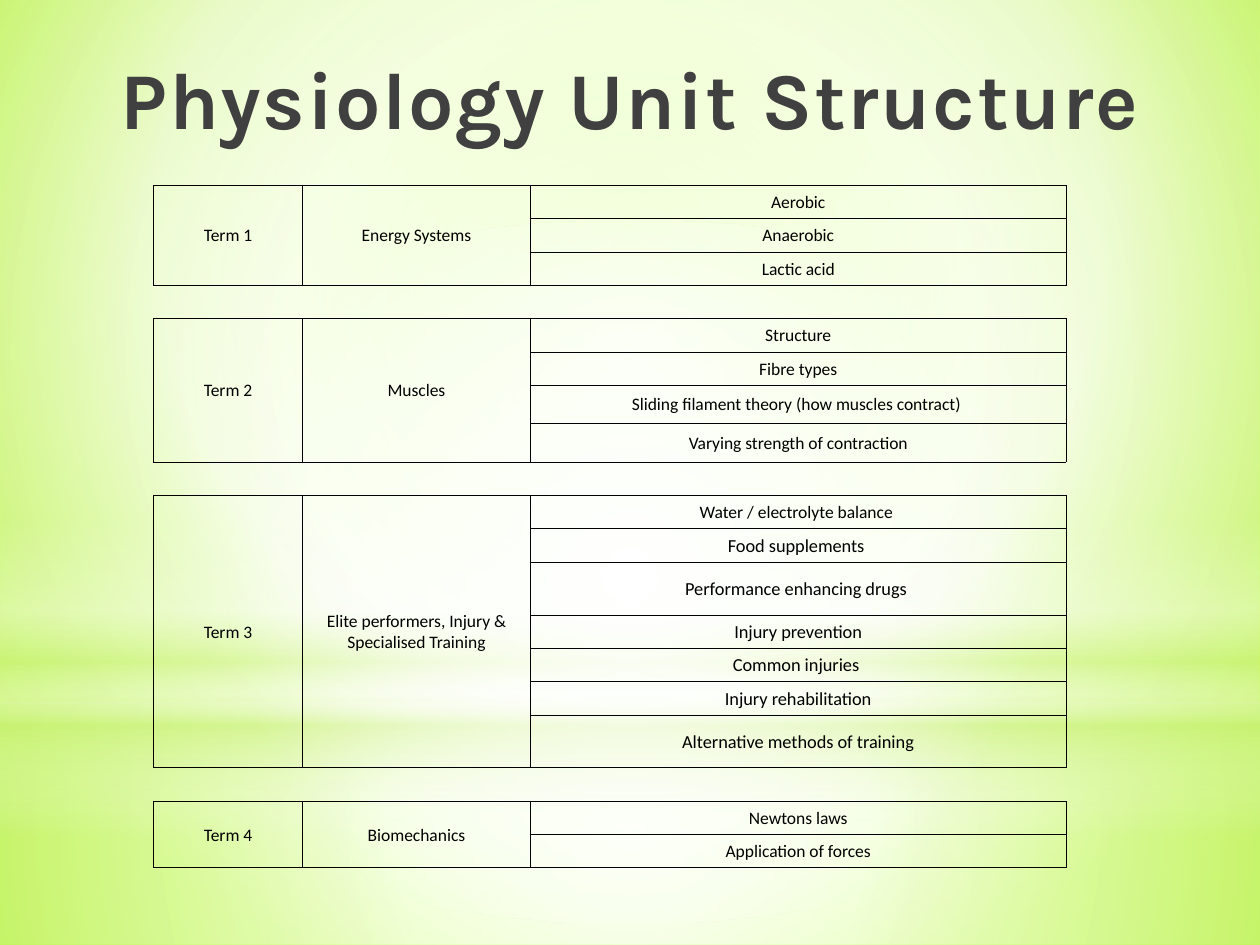
from lxml.etree import SubElement
from pptx import Presentation
from pptx.dml.color import RGBColor
from pptx.enum.shapes import MSO_SHAPE
from pptx.enum.text import MSO_ANCHOR, PP_ALIGN
from pptx.oxml import parse_xml
from pptx.oxml.ns import nsdecls, qn
from pptx.util import Inches, Pt

THEME = {
    "title": RGBColor(0x40, 0x40, 0x40),
    "text": RGBColor(0, 0, 0),
    "border": "000000",
    "white": "FFFFFF",
    "lime": "CAF278",
    "backdrop": [(0, "CAFF60", 100), (60, "F7FFE7", 100), (100, "B7FF29", 100)],
    "title_font": "Karla",
    "body_font": "Calibri",
    "title_size": Pt(46),
    "body_size": Pt(10),
    "large_size": Pt(10.5),
    "border_width": Pt(0.5),
}
WHITE, LIME = THEME["white"], THEME["lime"]
CENTRE = (50, 50, 50, 50)


def paint_gradient(fill, parent, stops, focus=None):
    fill.solid()
    stop_xml = "".join(
        f'<a:gs pos="{position * 1000}"><a:srgbClr val="{color}">'
        f'<a:alpha val="{alpha * 1000}"/></a:srgbClr></a:gs>'
        for position, color, alpha in stops
    )
    direction = '<a:lin ang="5400000" scaled="0"/>'
    if focus:
        edges = " ".join(f'{side}="{share * 1000}"' for side, share in zip("ltrb", focus))
        direction = f'<a:path path="circle"><a:fillToRect {edges}/></a:path>'
    gradient = parse_xml(
        f'<a:gradFill {nsdecls("a")} rotWithShape="1"><a:gsLst>{stop_xml}</a:gsLst>'
        f"{direction}</a:gradFill>"
    )
    parent.replace(parent.find(qn("a:solidFill")), gradient)


def set_borders(cell, visible_sides):
    properties = cell._tc.get_or_add_tcPr()
    for index, side in enumerate("LRTB"):
        paint = "<a:noFill/>"
        if side in visible_sides:
            paint = f'<a:solidFill><a:srgbClr val="{THEME["border"]}"/></a:solidFill>'
        properties.insert(index, parse_xml(
            f'<a:ln{side} {nsdecls("a")} w="{THEME["border_width"]}">{paint}</a:ln{side}>'
        ))


presentation = Presentation()
presentation.slide_width = Inches(10)
presentation.slide_height = Inches(7.5)
width, height = presentation.slide_width, presentation.slide_height
slide = presentation.slides.add_slide(presentation.slide_layouts[5])

background = slide.background.fill
background.solid()
paint_gradient(background, slide.element.find(".//" + qn("p:bgPr")),
               THEME["backdrop"], (20, 10, 20, 60))

horizon = 0.744
glows = [
    (MSO_SHAPE.RECTANGLE, horizon, 1 - horizon, CENTRE,
     [(0, WHITE, 91), (37, WHITE, 76), (100, LIME, 79)]),
    (MSO_SHAPE.RECTANGLE, 0, horizon, CENTRE,
     [(0, WHITE, 89), (48, WHITE, 62), (100, LIME, 79)]),
    (MSO_SHAPE.RECTANGLE, 0.55, 0.333, None,
     [(0, WHITE, 0), (29, WHITE, 30), (45, LIME, 40),
      (55, WHITE, 26), (65, LIME, 60), (100, WHITE, 0)]),
    (MSO_SHAPE.OVAL, 0.233, horizon, CENTRE, [(0, WHITE, 100), (56, WHITE, 0)]),
]
for kind, top, share, focus, stops in glows:
    shape = slide.shapes.add_shape(kind, 0, int(height * top), width, int(height * share))
    shape.shadow.inherit = False
    shape.line.fill.background()
    paint_gradient(shape.fill, shape.element.spPr, stops, focus)

title = slide.shapes.title
title.element.getparent().append(title.element)
title.left, title.top = int(width * 0.028), int(height * 0.039)
title.width, title.height = int(width * 0.945), int(height * 0.147)
title.text_frame.vertical_anchor = MSO_ANCHOR.MIDDLE
title.text_frame.margin_bottom = Inches(0.19)
paragraph = title.text_frame.paragraphs[0]
paragraph.alignment = PP_ALIGN.CENTER
run = paragraph.add_run()
run.text = "Physiology Unit Structure"
run.font.name = THEME["title_font"]
run.font.size = THEME["title_size"]
run.font.bold = True
run.font.color.rgb = THEME["title"]
run.font._element.set("spc", "100")

terms = [
    ("Term 1", "Energy Systems", ["Aerobic", "Anaerobic", "Lactic acid"]),
    ("Term 2", "Muscles", [
        "Structure", "Fibre types", "Sliding filament theory (how muscles contract) ",
        "Varying strength of contraction"]),
    ("Term 3", "Elite performers, Injury & Specialised Training", [
        "Water / electrolyte balance ", "Food supplements ", "Performance enhancing drugs ",
        "Injury prevention", "Common injuries ", "Injury rehabilitation",
        "Alternative methods of training"]),
    ("Term 4", "Biomechanics", ["Newtons laws", "Application of forces"]),
]
column_widths = [1.18, 1.81, 4.25]
tall_rows = {6: 0.3, 7: 0.31, 11: 0.42, 15: 0.42}
large_rows = range(10, 16)
table_height = 5.42
row_count = sum(len(topics) for _, _, topics in terms) + len(terms) - 1
row_height = (table_height - sum(tall_rows.values())) / (row_count - len(tall_rows))

table = slide.shapes.add_table(
    row_count, len(column_widths), int(width * 0.122), int(height * 0.196),
    Inches(sum(column_widths)), Inches(table_height)).table
table.first_row = table.horz_banding = False
for column, column_width in zip(table.columns, column_widths):
    column.width = Inches(column_width)
for index, row in enumerate(table.rows):
    row.height = Inches(tall_rows.get(index, row_height))

texts = {}
spacers = set()
first = 0
for term, unit, topics in terms:
    last = first + len(topics) - 1
    texts[first, 0], texts[first, 1] = term, unit
    for column in (0, 1):
        table.cell(first, column).merge(table.cell(last, column))
    for offset, topic in enumerate(topics):
        texts[first + offset, 2] = topic
    spacers.add(last + 1)
    first = last + 2

for row in range(row_count):
    for column in range(len(column_widths)):
        cell = table.cell(row, column)
        cell.fill.background()
        set_borders(cell, "TB" if row in spacers else "LRTB")
        cell.margin_left = cell.margin_right = cell.margin_top = Inches(0.01)
        cell.margin_bottom = 0
        cell.vertical_anchor = MSO_ANCHOR.MIDDLE
        paragraph = cell.text_frame.paragraphs[0]
        paragraph.alignment = PP_ALIGN.CENTER
        if (row, column) in texts:
            run = paragraph.add_run()
            run.text = texts[row, column]
            run.font.name = THEME["body_font"]
            is_large = column == 2 and row in large_rows
            run.font.size = THEME["large_size" if is_large else "body_size"]
            run.font.color.rgb = THEME["text"]
        else:
            ending = SubElement(paragraph._p, qn("a:endParaRPr"))
            ending.set("sz", str(int(THEME["body_size"].pt * 100)))

presentation.save("out.pptx")
